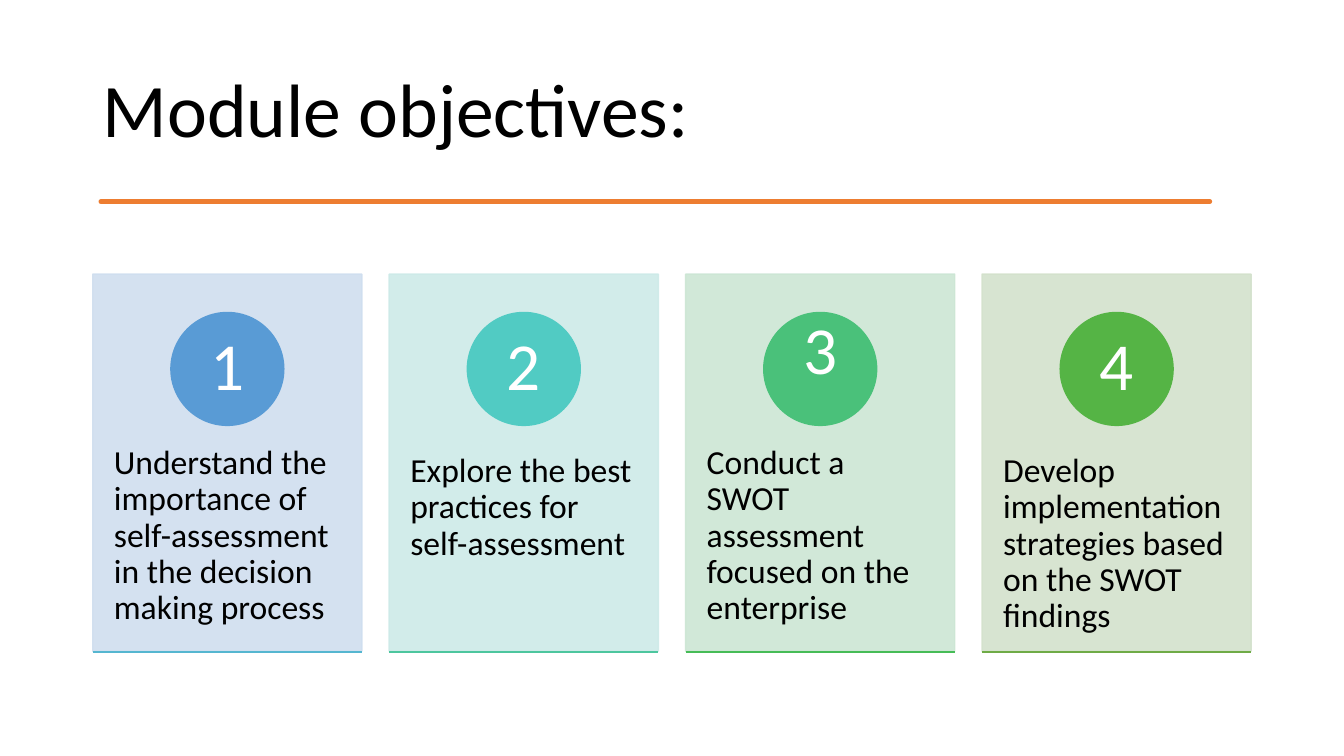
from dataclasses import dataclass

from lxml.etree import SubElement
from pptx import Presentation
from pptx.dml.color import RGBColor
from pptx.enum.shapes import MSO_CONNECTOR, MSO_SHAPE
from pptx.enum.text import MSO_ANCHOR, MSO_AUTO_SIZE, PP_ALIGN
from pptx.oxml.ns import qn
from pptx.util import Inches, Pt


@dataclass(frozen=True)
class Theme:
    font: str = "Calibri"
    ink: str = "000000"
    badge_ink: str = "FFFFFF"
    accent: str = "ED7D31"
    title_size: int = 54
    number_size: int = 48
    body_size: int = 24
    brush_width: float = 3.25
    line_width: float = 1
    card_opacity: int = 89


THEME = Theme()

CARD_LEFT, CARD_TOP, CARD_WIDTH, CARD_HEIGHT = 0.92, 2.72, 2.67, 3.74
CARD_STEP = 2.94
BADGE_TOP, BADGE_SIZE = 3.1, 1.12
NUMBER_SIZE = 0.79

# objective, text top, number top, card colour, badge colour, base line colour
OBJECTIVES = [
    ("Understand the importance of self-assessment in the decision making process",
     4.06, 3.26, "CFDEEF", "599BD5", "55B6D0"),
    ("Explore the best practices for self-assessment",
     4.14, 3.26, "CDEAE8", "51CBC3", "4DC69E"),
    ("Conduct a SWOT assessment focused on the enterprise",
     4.06, 3.1, "CCE6D4", "4AC17A", "46BC57"),
    ("Develop implementation strategies based on the SWOT findings",
     4.14, 3.26, "D3E1CC", "55B445", "6FAB46"),
]

BRUSH_TOP = [
    (0.92, 2.04), (1.45, 2.03), (1.95, 2.04), (2.35, 2.03), (2.85, 2.04),
    (3.45, 2.03), (3.72, 2.02), (4.1, 2.04), (4.6, 2.04), (5.1, 2.03),
    (5.45, 2.01), (5.78, 2.04), (6.3, 2.03), (6.9, 2.01), (7.4, 2.03),
    (7.9, 2.04), (8.3, 2.03), (8.75, 2.04), (9.15, 2.04), (9.45, 2.02),
    (9.85, 2.03), (10.4, 2.03), (10.85, 2.03), (11.25, 2.02), (11.6, 2.03),
    (12.32, 2.04),
]
BRUSH_BOTTOM = [
    (12.32, 2.06), (11.75, 2.05), (11.15, 2.09), (10.68, 2.06), (10.2, 2.06),
    (9.8, 2.06), (9.15, 2.08), (8.74, 2.07), (8.4, 2.08), (8.0, 2.06),
    (7.5, 2.06), (6.9, 2.07), (6.35, 2.06), (5.85, 2.06), (5.3, 2.07),
    (4.75, 2.05), (4.1, 2.08), (3.72, 2.06), (3.3, 2.05), (2.9, 2.06),
    (2.4, 2.05), (1.95, 2.07), (1.45, 2.07), (0.92, 2.06),
]


def apply_format(target, settings):
    for attribute, value in settings.items():
        setattr(target, attribute, value)


def write_text(shape, text, size, color, align=PP_ALIGN.LEFT,
               anchor=MSO_ANCHOR.TOP, insets=(0.1, 0.05)):
    side, end = (Inches(inset) for inset in insets)
    frame = shape.text_frame
    apply_format(frame, {
        "text": text, "word_wrap": True, "auto_size": MSO_AUTO_SIZE.NONE,
        "vertical_anchor": anchor, "margin_left": side, "margin_right": side,
        "margin_top": end, "margin_bottom": end,
    })
    paragraph = frame.paragraphs[0]
    apply_format(paragraph, {"alignment": align, "line_spacing": 0.9})
    font = paragraph.runs[0].font
    apply_format(font, {"name": THEME.font, "size": Pt(size)})
    font.color.rgb = RGBColor.from_string(color)


def paint(shape, color, width=THEME.line_width, opacity=100):
    """Give fill and outline one colour, opacity in percent."""
    shape.shadow.inherit = False
    for fill in (shape.fill, shape.line.fill):
        fill.solid()
        fill.fore_color.rgb = RGBColor.from_string(color)
    shape.line.width = Pt(width)
    if opacity < 100:
        for swatch in shape._element.spPr.iter(qn("a:srgbClr")):
            SubElement(swatch, qn("a:alpha"), val=str(opacity * 1000))


def add_title(slide, text):
    title = slide.shapes.title
    apply_format(title, {"left": Inches(0.92), "top": Inches(0.4),
                         "width": Inches(11.5), "height": Inches(1.45)})
    write_text(title, text, THEME.title_size, THEME.ink, anchor=MSO_ANCHOR.MIDDLE)


def add_brush_stroke(slide):
    start, *outline = BRUSH_TOP + BRUSH_BOTTOM
    builder = slide.shapes.build_freeform(*start, scale=Inches(1))
    builder.add_line_segments(outline, close=True)
    paint(builder.convert_to_shape(), THEME.accent, THEME.brush_width)


def add_base_line(slide, left, color):
    y = Inches(CARD_TOP + CARD_HEIGHT + 0.01)
    base = slide.shapes.add_connector(
        MSO_CONNECTOR.STRAIGHT, Inches(left), y, Inches(left + CARD_WIDTH), y)
    base.line.color.rgb = RGBColor.from_string(color)
    base.line.width = Pt(THEME.line_width)
    SubElement(base._element.spPr, qn("a:effectLst"))


def add_objective(slide, number, objective):
    text, text_top, number_top, card_color, badge_color, base_color = objective
    shapes = slide.shapes
    left = CARD_LEFT + (number - 1) * CARD_STEP
    center = left + CARD_WIDTH / 2

    card = shapes.add_shape(MSO_SHAPE.RECTANGLE, Inches(left), Inches(CARD_TOP),
                            Inches(CARD_WIDTH), Inches(CARD_HEIGHT))
    paint(card, card_color, opacity=THEME.card_opacity)

    description = shapes.add_textbox(Inches(left), Inches(text_top),
                                     Inches(CARD_WIDTH), Inches(2.25))
    write_text(description, text, THEME.body_size, THEME.ink, insets=(0.21, 0.36))

    badge = shapes.add_shape(
        MSO_SHAPE.OVAL, Inches(center - BADGE_SIZE / 2), Inches(BADGE_TOP),
        Inches(BADGE_SIZE), Inches(BADGE_SIZE))
    paint(badge, badge_color)

    label = shapes.add_textbox(
        Inches(center - NUMBER_SIZE / 2), Inches(number_top),
        Inches(NUMBER_SIZE), Inches(NUMBER_SIZE))
    write_text(label, str(number), THEME.number_size, THEME.badge_ink,
               PP_ALIGN.CENTER, MSO_ANCHOR.MIDDLE, (0.09, 0.01))

    add_base_line(slide, left, base_color)


def main():
    deck = Presentation()
    apply_format(deck, {"slide_width": Inches(13.33), "slide_height": Inches(7.5)})
    slide = deck.slides.add_slide(deck.slide_layouts.get_by_name("Title Only"))
    add_title(slide, "Module objectives:")
    add_brush_stroke(slide)
    for number, objective in enumerate(OBJECTIVES, start=1):
        add_objective(slide, number, objective)
    deck.save("out.pptx")


if __name__ == "__main__":
    main()
